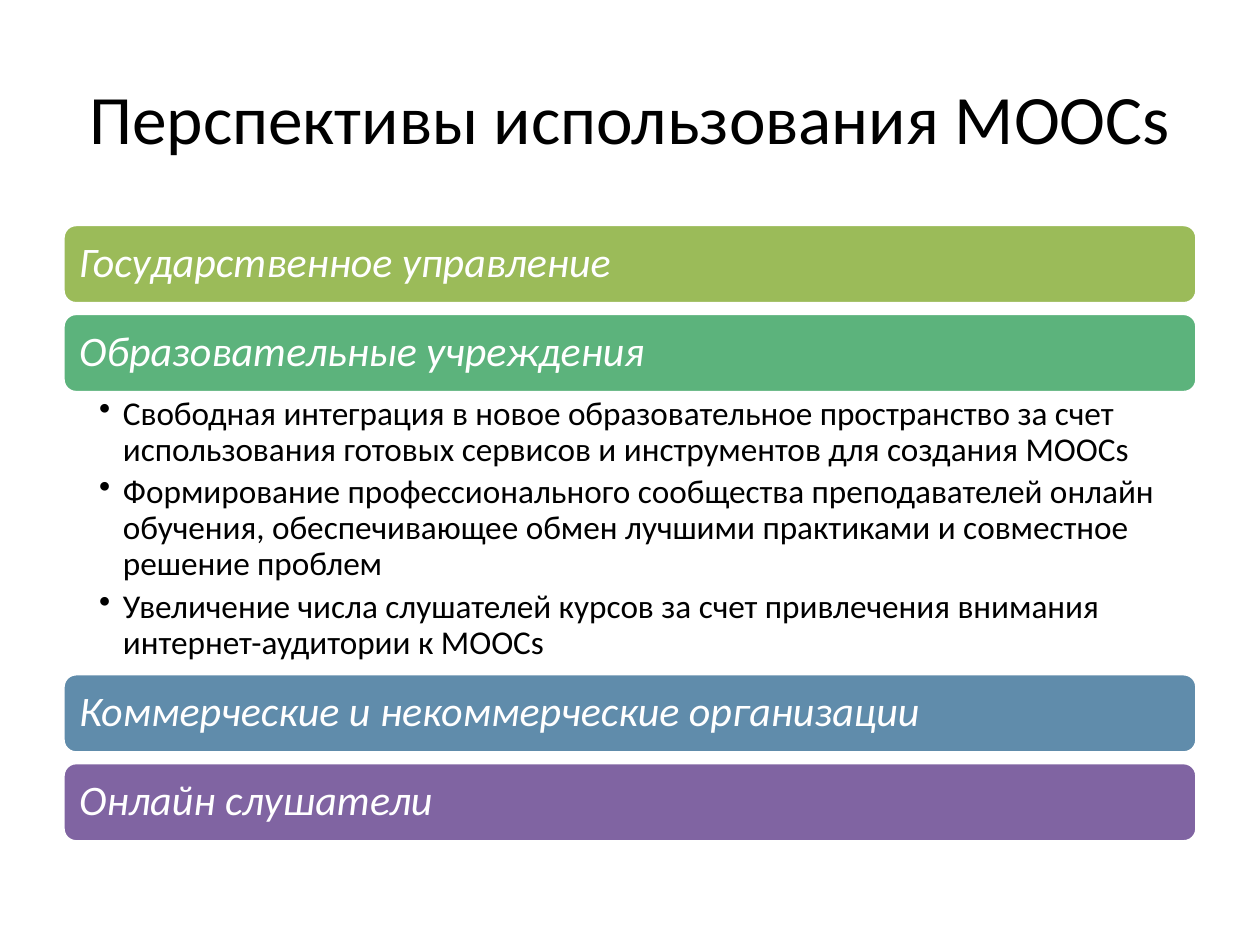
"""Build the slide on the prospects of using MOOCs."""
from dataclasses import dataclass

import pptx
import pptx.dml.color
import pptx.enum.shapes
import pptx.enum.text
import pptx.oxml
import pptx.oxml.ns
import pptx.slide
import pptx.text.text
import pptx.util

Pt = pptx.util.Pt
RGBColor = pptx.dml.color.RGBColor
MIDDLE = pptx.enum.text.MSO_ANCHOR.MIDDLE

BLACK = RGBColor(0x00, 0x00, 0x00)
WHITE = RGBColor(0xFF, 0xFF, 0xFF)
OLIVE = RGBColor(0x9B, 0xBB, 0x59)
GREEN = RGBColor(0x5C, 0xB3, 0x7C)
BLUE = RGBColor(0x60, 0x8C, 0xAB)
PURPLE = RGBColor(0x80, 0x64, 0xA2)

FONT = "Calibri"
LEFT, WIDTH = 36, 648
FIRST_TOP, BAND_HEIGHT, BAND_GAP = 128.3, 45.3, 5.5
DETAILS_HEIGHT = 160.6
BULLET_INDENT = 13.7


@dataclass(frozen=True)
class Audience:
    name: str
    color: RGBColor
    prospects: tuple[str, ...] = ()


AUDIENCES = (
    Audience("Государственное управление", OLIVE),
    Audience("Образовательные учреждения", GREEN, (
        "Свободная интеграция в новое образовательное пространство за счет "
        "использования готовых сервисов и инструментов для создания MOOCs",
        "Формирование профессионального сообщества преподавателей онлайн обучения, "
        "обеспечивающее обмен лучшими практиками и совместное решение проблем",
        "Увеличение числа слушателей курсов за счет привлечения внимания "
        "интернет-аудитории к MOOCs",
    )),
    Audience("Коммерческие и некоммерческие организации", BLUE),
    Audience("Онлайн слушатели", PURPLE),
)


def set_margins(frame: pptx.text.text.TextFrame, left: float, right: float, vertical: float) -> None:
    """Set the insets of a wrapping text frame."""
    frame.word_wrap = True
    frame.margin_left, frame.margin_right = Pt(left), Pt(right)
    frame.margin_top = frame.margin_bottom = Pt(vertical)


def write(paragraph: pptx.text.text._Paragraph, text: str, size: float,
          color: RGBColor, italic: bool = False) -> None:
    """Fill a paragraph and format its runs."""
    paragraph.text = text
    for run in paragraph.runs:
        run.font.name = FONT
        run.font.size = Pt(size)
        run.font.italic = italic
        run.font.color.rgb = color


def add_bullet(paragraph: pptx.text.text._Paragraph) -> None:
    """Give a paragraph a hanging round bullet."""
    properties = paragraph._p.get_or_add_pPr()
    properties.set("marL", str(Pt(BULLET_INDENT)))
    properties.set("indent", str(-Pt(BULLET_INDENT)))
    properties.append(pptx.oxml.parse_xml(
        f'<a:buChar {pptx.oxml.ns.nsdecls("a")} char="•"/>'))


def draw_title(slide: pptx.slide.Slide, text: str) -> None:
    """Draw the centred slide title."""
    title = slide.shapes.add_textbox(Pt(LEFT), Pt(21.6), Pt(WIDTH), Pt(90))
    frame = title.text_frame
    set_margins(frame, 7.2, 7.2, 3.6)
    frame.vertical_anchor = MIDDLE
    heading = frame.paragraphs[0]
    write(heading, text, 39.6, BLACK)
    heading.alignment = pptx.enum.text.PP_ALIGN.CENTER


def draw_band(slide: pptx.slide.Slide, audience: Audience, top: float) -> None:
    """Draw the coloured band that names an audience."""
    band = slide.shapes.add_shape(
        pptx.enum.shapes.MSO_SHAPE.ROUNDED_RECTANGLE,
        Pt(LEFT), Pt(top), Pt(WIDTH), Pt(BAND_HEIGHT))
    band.shadow.inherit = False
    band.fill.solid()
    band.fill.fore_color.rgb = audience.color
    band.line.color.rgb = WHITE
    band.line.width = Pt(2)
    frame = band.text_frame
    set_margins(frame, 7.2, 7.2, 7.2)
    frame.vertical_anchor = MIDDLE
    name = frame.paragraphs[0]
    write(name, audience.name, 24, WHITE, italic=True)
    name.alignment = pptx.enum.text.PP_ALIGN.LEFT
    name.line_spacing = 0.9


def draw_prospects(slide: pptx.slide.Slide, prospects: tuple[str, ...], top: float) -> None:
    """Draw the bulleted prospects under a band."""
    details = slide.shapes.add_textbox(Pt(LEFT), Pt(top), Pt(WIDTH), Pt(DETAILS_HEIGHT))
    frame = details.text_frame
    set_margins(frame, 20.6, 13.7, 2.2)
    for index, prospect in enumerate(prospects):
        paragraph = frame.add_paragraph() if index else frame.paragraphs[0]
        write(paragraph, prospect, 19, BLACK)
        paragraph.level = 1
        paragraph.line_spacing = 0.9
        paragraph.space_after = Pt(3.8)
        add_bullet(paragraph)


def main() -> None:
    """Build and save the presentation."""
    presentation = pptx.Presentation()
    presentation.slide_width, presentation.slide_height = Pt(720), Pt(540)
    slide = presentation.slides.add_slide(presentation.slide_layouts[6])
    draw_title(slide, "Перспективы использования MOOCs")
    top = FIRST_TOP
    for audience in AUDIENCES:
        draw_band(slide, audience, top)
        top += BAND_HEIGHT
        if audience.prospects:
            draw_prospects(slide, audience.prospects, top)
            top += DETAILS_HEIGHT
        else:
            top += BAND_GAP
    presentation.save("out.pptx")


if __name__ == "__main__":
    main()
